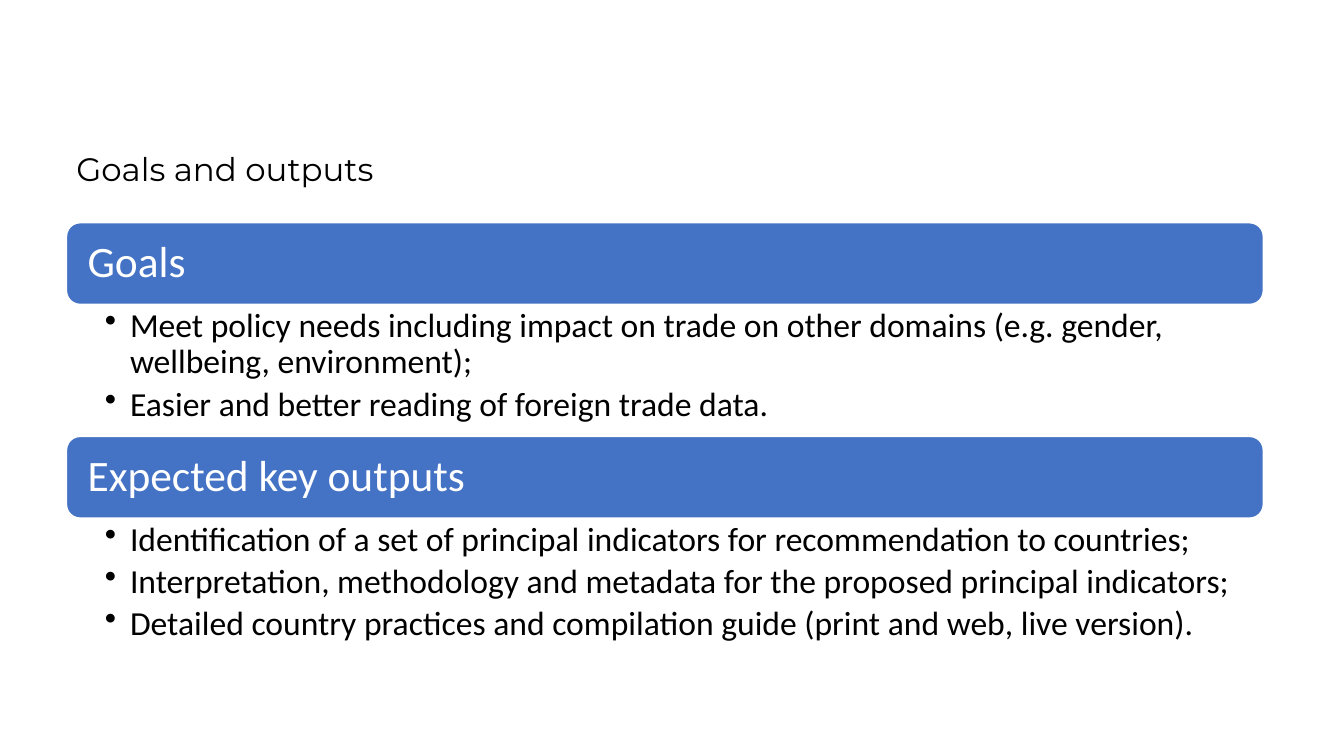
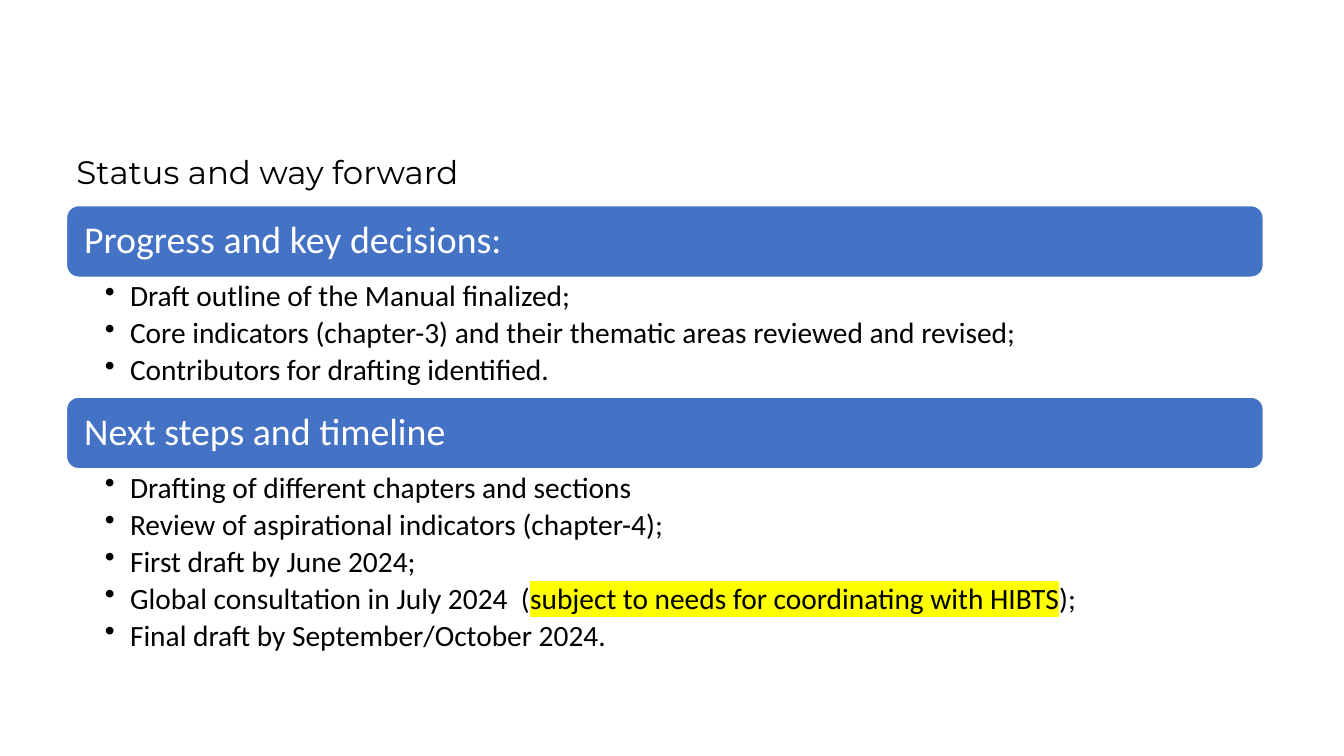
"""Build two slides of headed bullet lists that share one layout."""
from dataclasses import dataclass
from typing import Any

import lxml.etree
import pptx
import pptx.dml.color
import pptx.enum.shapes
import pptx.enum.text
import pptx.oxml.ns
import pptx.util

Inches = pptx.util.Inches
Pt = pptx.util.Pt
qn = pptx.oxml.ns.qn
ANCHOR = pptx.enum.text.MSO_ANCHOR

BLUE, WHITE, BLACK, YELLOW = "4472C4", "FFFFFF", "000000", "FFFF00"
LEFT, WIDTH, TITLE_WIDTH, TITLE_HEIGHT = 0.66, 11.87, 8.23, 0.63
BODY_LEFT_INSET, BULLET_INDENT = 0.38, 0.25
LINE_SPACING, BULLET_GAP = 0.9, 0.18


@dataclass(frozen=True)
class Run:
    text: str
    highlight: str = ""


@dataclass(frozen=True)
class Section:
    heading: str
    body_height: float
    bullets: list[list[Run]]


@dataclass(frozen=True)
class Page:
    title: str
    title_top: float
    top: float
    band_height: float
    heading_size: float
    heading_inset: float
    body_size: float
    body_right_inset: float
    sections: list[Section]


PAGES = [
    Page("Goals and outputs", 1.47, 2.21, 0.81, 31, 0.17, 24, 0.24, [
        Section("Goals", 1.31, [
            [Run("Meet policy needs including impact on trade on other domains "
                 "(e.g. gender, wellbeing, environment);")],
            [Run("Easier and better reading of foreign trade data.")],
        ]),
        Section("Expected key outputs", 1.37, [
            [Run("Identification of a set of principal indicators for recommendation to countries;")],
            [Run("Interpretation, methodology and metadata for the proposed principal indicators;")],
            [Run("Detailed country practices and compilation guide (print and web, live version).")],
        ]),
    ]),
    Page("Status and way forward", 1.5, 2.04, 0.71, 27, 0.14, 21, 0.21, [
        Section("Progress and key decisions:", 1.19, [
            [Run("Draft outline of the Manual finalized;")],
            [Run("Core indicators (chapter-3) and their thematic areas reviewed and revised;")],
            [Run("Contributors for drafting identified.")],
        ]),
        Section("Next steps and timeline", 2.02, [
            [Run("Drafting of different chapters and sections")],
            [Run("Review of aspirational indicators (chapter-4);")],
            [Run("First draft by June 2024;")],
            [Run("Global consultation in July 2024  ("),
             Run("subject to needs for coordinating with HIBTS", YELLOW),
             Run(");")],
            [Run("Final draft by September/October 2024.")],
        ]),
    ]),
]


def rgb(value: str) -> pptx.dml.color.RGBColor:
    """Turn a hex string into a colour."""
    return pptx.dml.color.RGBColor.from_string(value)


def apply(target: Any, values: dict[str, Any]) -> None:
    """Set each named attribute on the target."""
    for name, value in values.items():
        setattr(target, name, value)


def set_frame(tf: Any, left: float, top: float, right: float, anchor: Any) -> None:
    """Set wrapping, insets and anchor of a text frame."""
    apply(tf, {
        "word_wrap": True,
        "margin_left": Inches(left),
        "margin_right": Inches(right),
        "margin_top": Inches(top),
        "margin_bottom": Inches(top),
        "vertical_anchor": anchor,
    })


def add_runs(p: Any, runs: list[Run], font: str, size: float, color: str) -> None:
    """Fill a paragraph with left-aligned runs of one font."""
    apply(p, {"line_spacing": LINE_SPACING, "alignment": pptx.enum.text.PP_ALIGN.LEFT})
    for run in runs:
        r = p.add_run()
        r.text = run.text
        apply(r.font, {"name": font, "size": Pt(size)})
        r.font.color.rgb = rgb(color)
        if run.highlight:
            mark = lxml.etree.Element(qn("a:highlight"))
            lxml.etree.SubElement(mark, qn("a:srgbClr"), val=run.highlight)
            r.font._element.find(qn("a:solidFill")).addnext(mark)


def add_title(s: Any, page: Page) -> None:
    """Add the slide title."""
    sp = s.shapes.add_textbox(Inches(LEFT), Inches(page.title_top),
                              Inches(TITLE_WIDTH), Inches(TITLE_HEIGHT))
    set_frame(sp.text_frame, 0.1, 0.05, 0.1, ANCHOR.TOP)
    add_runs(sp.text_frame.paragraphs[0], [Run(page.title)], "Montserrat", 23.2, BLACK)


def add_band(s: Any, page: Page, heading: str, top: float) -> None:
    """Add a rounded heading band."""
    sp = s.shapes.add_shape(pptx.enum.shapes.MSO_SHAPE.ROUNDED_RECTANGLE, Inches(LEFT),
                            Inches(top), Inches(WIDTH), Inches(page.band_height))
    sp.shadow.inherit = False
    sp.fill.solid()
    sp.fill.fore_color.rgb = rgb(BLUE)
    sp.line.color.rgb = rgb(WHITE)
    sp.line.width = Pt(1)
    inset = page.heading_inset
    set_frame(sp.text_frame, inset, 0.1, inset, ANCHOR.MIDDLE)
    add_runs(sp.text_frame.paragraphs[0], [Run(heading)], "Calibri", page.heading_size, WHITE)


def add_bullets(s: Any, page: Page, section: Section, top: float) -> None:
    """Add the bullet list under a band."""
    sp = s.shapes.add_textbox(Inches(LEFT), Inches(top),
                              Inches(WIDTH), Inches(section.body_height))
    tf = sp.text_frame
    set_frame(tf, BODY_LEFT_INSET, 0.04, page.body_right_inset, ANCHOR.TOP)
    for i, runs in enumerate(section.bullets):
        p = tf.add_paragraph() if i else tf.paragraphs[0]
        props = p._p.get_or_add_pPr()
        props.set("marL", str(Inches(BULLET_INDENT)))
        props.set("indent", str(-Inches(BULLET_INDENT)))
        lxml.etree.SubElement(props, qn("a:buChar"), char="•")
        p.space_after = Pt(page.body_size * BULLET_GAP)
        add_runs(p, runs, "Calibri", page.body_size, BLACK)


def add_page(prs: Any, page: Page) -> None:
    """Add one slide with its sections stacked without gaps."""
    s = prs.slides.add_slide(prs.slide_layouts[6])
    top = page.top
    for section in page.sections:
        add_band(s, page, section.heading, top)
        top += page.band_height
        add_bullets(s, page, section, top)
        top += section.body_height
    add_title(s, page)


def main() -> None:
    """Build and save the presentation."""
    prs = pptx.Presentation()
    apply(prs, {"slide_width": Inches(13.33), "slide_height": Inches(7.5)})
    for page in PAGES:
        add_page(prs, page)
    prs.save("out.pptx")


if __name__ == "__main__":
    main()
